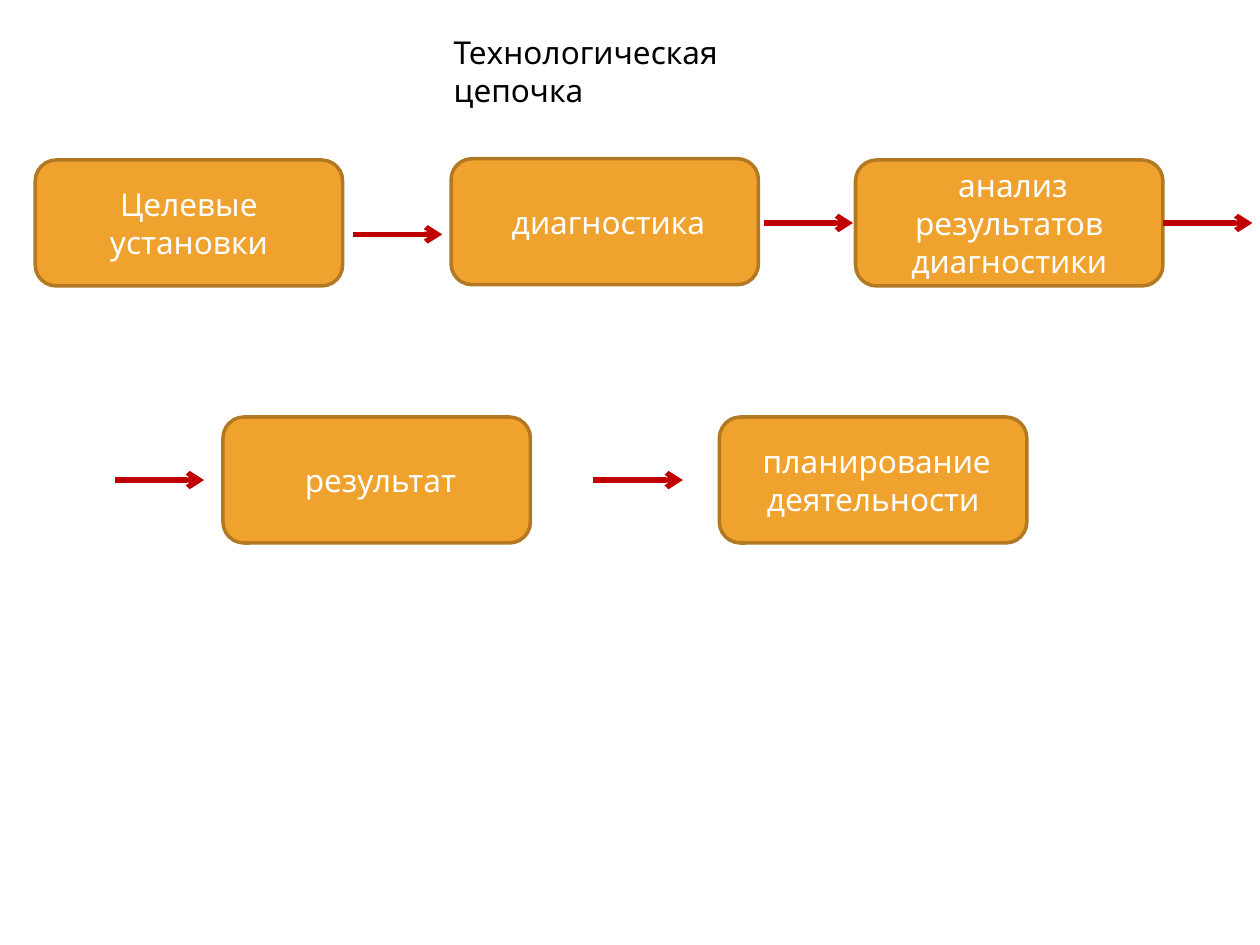
"""Build the slide that shows a process chain of five steps."""
import pptx
import pptx.dml.color
import pptx.enum.shapes
import pptx.enum.text
import pptx.oxml
import pptx.oxml.ns
import pptx.util

WIDTH, HEIGHT = 10, 7.5
STEP_WIDTH, STEP_HEIGHT = 2.44, 1
ARROW_LENGTH = 0.71
TOP_ROW, BOTTOM_ROW = 1.27, 3.31
STEPS = [
    ("Целевые установки", 0.28, TOP_ROW),
    (" диагностика", 3.58, TOP_ROW - 0.01),
    (" анализ результатов диагностики", 6.79, TOP_ROW),
    (" результат", 1.77, BOTTOM_ROW),
    (" планирование деятельности", 5.71, BOTTOM_ROW),
]
TOP_ARROWS, BOTTOM_ARROWS = TOP_ROW + STEP_HEIGHT / 2, BOTTOM_ROW + STEP_HEIGHT / 2
ARROWS = [
    (2.8, TOP_ARROWS + 0.09),
    (6.06, TOP_ARROWS),
    (9.23, TOP_ARROWS),
    (0.91, BOTTOM_ARROWS),
    (4.71, BOTTOM_ARROWS),
]


def inches(*lengths):
    """Turn numbers into slide lengths."""
    return [pptx.util.Inches(length) for length in lengths]


def color(code):
    """Turn a hex string into a colour."""
    return pptx.dml.color.RGBColor.from_string(code)


def write(shape, text, code, align, anchor):
    """Put one formatted paragraph into a shape."""
    frame = shape.text_frame
    frame.word_wrap = True
    frame.auto_size = pptx.enum.text.MSO_AUTO_SIZE.NONE
    frame.vertical_anchor = anchor
    frame.margin_left, frame.margin_right = inches(0.1, 0.1)
    frame.margin_top, frame.margin_bottom = inches(0.05, 0.05)
    frame.text = text
    para = frame.paragraphs[0]
    para.alignment = align
    para.line_spacing = 1.0
    para.space_before = pptx.util.Pt(0)
    para.font.name = "Karla"
    para.font.size = pptx.util.Pt(18)
    para.font.color.rgb = color(code)


def set_title(page, text):
    """Fill and place the title placeholder."""
    title = page.shapes.title
    title.left, title.top, title.width, title.height = inches(3.5, 0.21, 2.99, 0.4)
    write(title, text, "000000", pptx.enum.text.PP_ALIGN.LEFT,
          pptx.enum.text.MSO_ANCHOR.TOP)


def add_step(page, text, left, top):
    """Add one rounded box of the chain."""
    box = page.shapes.add_shape(
        pptx.enum.shapes.MSO_SHAPE.ROUNDED_RECTANGLE,
        *inches(left, top, STEP_WIDTH, STEP_HEIGHT))
    box.shadow.inherit = False
    box.fill.solid()
    box.fill.fore_color.rgb = color("F0A22E")
    box.line.color.rgb = color("B27822")
    box.line.width = pptx.util.Pt(2)
    write(box, text, "FFFFFF", pptx.enum.text.PP_ALIGN.CENTER,
          pptx.enum.text.MSO_ANCHOR.MIDDLE)


def add_arrow(page, left, top):
    """Add one arrow that points right."""
    arrow = page.shapes.add_connector(
        pptx.enum.shapes.MSO_CONNECTOR.STRAIGHT,
        *inches(left, top, left + ARROW_LENGTH, top))
    arrow.line.color.rgb = color("C00000")
    arrow.line.width = pptx.util.Pt(3)
    head = pptx.oxml.parse_xml(
        f'<a:tailEnd {pptx.oxml.ns.nsdecls("a")} type="arrow"/>')
    arrow.line._get_or_add_ln().append(head)
    effects = pptx.oxml.parse_xml(f'<a:effectLst {pptx.oxml.ns.nsdecls("a")}/>')
    arrow._element.spPr.append(effects)


def main():
    """Build and save the deck."""
    deck = pptx.Presentation()
    deck.slide_width, deck.slide_height = inches(WIDTH, HEIGHT)
    page = deck.slides.add_slide(deck.slide_layouts.get_by_name("Title Only"))
    set_title(page, "Технологическая цепочка")
    for text, left, top in STEPS:
        add_step(page, text, left, top)
    for left, top in ARROWS:
        add_arrow(page, left, top)
    deck.save("out.pptx")


if __name__ == "__main__":
    main()
